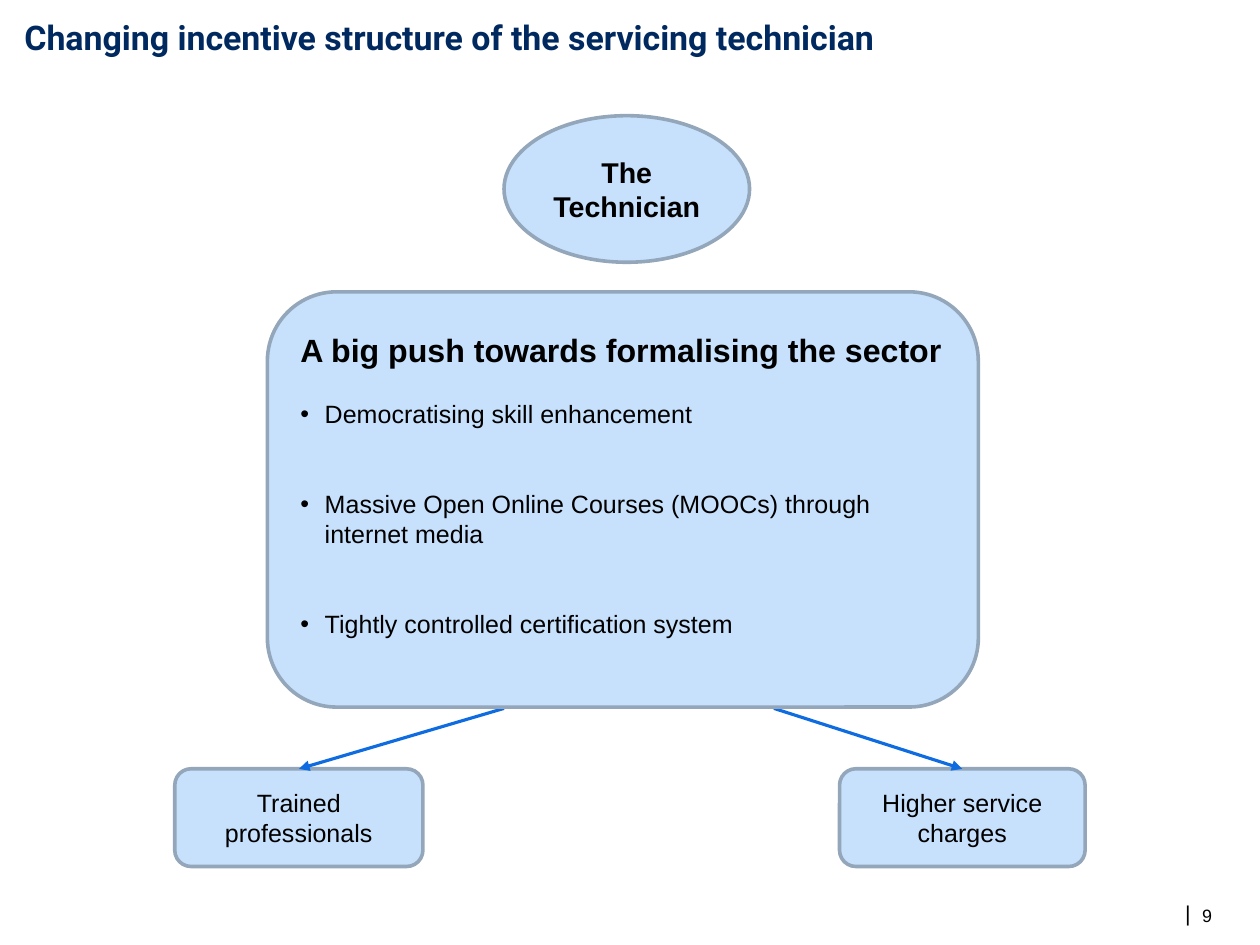
from lxml.etree import SubElement
from pptx import Presentation
from pptx.dml.color import RGBColor
from pptx.enum.shapes import MSO_CONNECTOR as Connector, MSO_SHAPE as Shape
from pptx.enum.text import MSO_ANCHOR as Anchor, PP_ALIGN as Align
from pptx.oxml.ns import qn
from pptx.util import Inches, Pt

UNIT = Inches(0.1)
COLUMNS, ROWS = 98, 73.5

NAVY = RGBColor(0x00, 0x29, 0x60)
BLACK = RGBColor(0x00, 0x00, 0x00)
PALE_BLUE = RGBColor(0xC7, 0xE0, 0xFB)
SLATE = RGBColor(0x93, 0xA6, 0xBA)
ARROW_BLUE = RGBColor(0x0E, 0x6C, 0xE0)

MEASURES = (
    "Democratising skill enhancement",
    "Massive Open Online Courses (MOOCs) through internet media",
    "Tightly controlled certification system",
)


def grid(*cells):
    return [round(cell * UNIT) for cell in cells]


def style(paragraph, size, bold=False, color=BLACK, font="Arial", align=Align.LEFT):
    paragraph.alignment = align
    for run in paragraph.runs:
        run.font.name = font
        run.font.size = Pt(size)
        run.font.bold = bold
        run.font.color.rgb = color


def add_label(slide, cells, text, size, **look):
    label = slide.shapes.add_textbox(*grid(*cells))
    frame = label.text_frame
    frame.word_wrap = True
    frame.margin_left = frame.margin_right = 0
    frame.margin_top = frame.margin_bottom = 0
    frame.text = text
    style(frame.paragraphs[0], size, **look)


def add_node(slide, outline, cells, text, size, bold=False, align=Align.CENTER):
    node = slide.shapes.add_shape(outline, *grid(*cells))
    node.shadow.inherit = False
    node.fill.solid()
    node.fill.fore_color.rgb = PALE_BLUE
    node.line.color.rgb = SLATE
    node.line.width = Pt(2)
    frame = node.text_frame
    frame.word_wrap = True
    frame.vertical_anchor = Anchor.MIDDLE
    frame.text = text
    style(frame.paragraphs[0], size, bold, align=align)
    return node


def add_measure(frame, text, gap):
    measure = frame.add_paragraph()
    measure.text = text
    measure.space_before = Pt(gap)
    indent = Inches(0.19)
    properties = measure._p.get_or_add_pPr()
    properties.set("marL", str(indent))
    properties.set("indent", str(-indent))
    SubElement(properties, qn("a:buFont"), typeface="Arial")
    SubElement(properties, qn("a:buChar"), char="•")
    style(measure, 14)


def add_arrow(slide, start, outcome):
    arrow = slide.shapes.add_connector(Connector.STRAIGHT, *grid(*start, *start))
    arrow.end_connect(outcome, 0)
    arrow.line.color.rgb = ARROW_BLUE
    arrow.line.width = Pt(1.75)
    SubElement(arrow.line._get_or_add_ln(), qn("a:tailEnd"), type="triangle")
    SubElement(arrow._element.spPr, qn("a:effectLst"))


def main():
    deck = Presentation()
    deck.slide_width, deck.slide_height = grid(COLUMNS, ROWS)
    slide = deck.slides.add_slide(deck.slide_layouts[6])

    add_label(slide, (92.1, 70, 0.5, 2), "|", 12, align=Align.RIGHT)
    add_label(slide, (93.5, 70.4, 2.1, 1.7), "9", 10)
    add_label(slide, (1.9, 1.3, 94.3, 3.2),
              "Changing incentive structure of the servicing technician",
              19, bold=True, color=NAVY, font="Roboto")

    trained = add_node(slide, Shape.ROUNDED_RECTANGLE, (13.6, 59.8, 19.3, 7.6),
                       "Trained professionals", 14)
    add_node(slide, Shape.OVAL, (39.2, 9, 19.1, 11.4), "The Technician", 16, bold=True)
    charges = add_node(slide, Shape.ROUNDED_RECTANGLE, (65.3, 59.8, 19.1, 7.6),
                       "Higher service charges", 14)

    for start_column, outcome in ((39.2, trained), (60.2, charges)):
        add_arrow(slide, (start_column, 55.1), outcome)

    push = add_node(slide, Shape.ROUNDED_RECTANGLE, (20.8, 22.7, 55.3, 32.3),
                    "A big push towards formalising the sector", 18,
                    bold=True, align=Align.LEFT)
    push.text_frame.margin_bottom = Inches(0.28)
    for position, text in enumerate(MEASURES):
        add_measure(push.text_frame, text, 33.5 if position else 16.75)

    deck.save("out.pptx")


if __name__ == "__main__":
    main()
